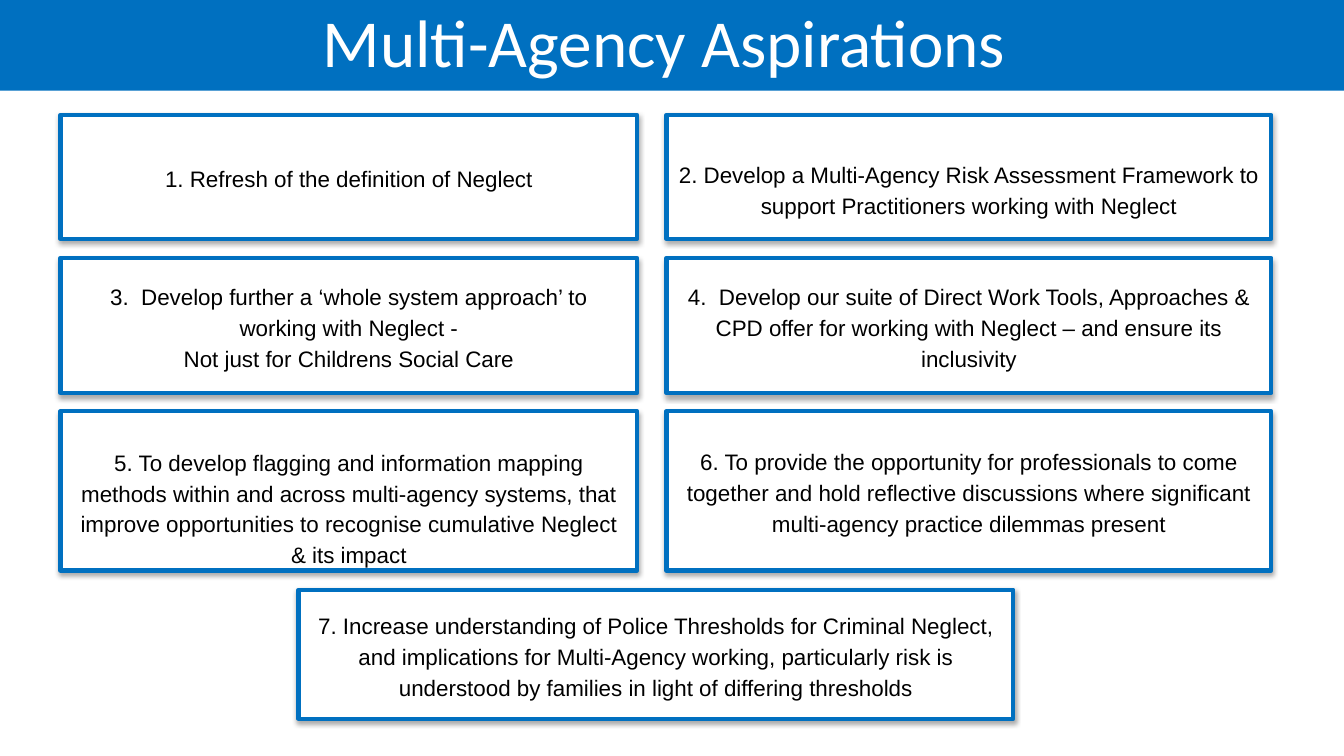
from lxml.etree import SubElement
from pptx import Presentation
from pptx.dml.color import RGBColor
from pptx.enum.shapes import MSO_SHAPE
from pptx.enum.text import MSO_ANCHOR, MSO_AUTO_SIZE, PP_ALIGN
from pptx.oxml.ns import qn
from pptx.util import Inches, Pt

BLUE = RGBColor(0x00, 0x70, 0xC0)
WHITE = RGBColor(0xFF, 0xFF, 0xFF)
BLACK = RGBColor(0x00, 0x00, 0x00)

SLIDE_WIDTH, SLIDE_HEIGHT = Inches(13.33), Inches(7.5)
BANNER_SHARE = 0.12
COLUMNS = {"left": (0.6, 5.72), "right": (6.61, 6.0), "centre": (2.96, 7.09)}
ROWS = [(1.14, 1.23), (2.56, 1.34), (4.08, 1.58), (5.85, 1.28)]

ASPIRATIONS = [
    ("left", 0, ["1. Refresh of the definition of Neglect"], 0.05, 0.05),
    ("right", 0, ["2. Develop a Multi-Agency Risk Assessment Framework to support "
                  "Practitioners working with Neglect"], 0.27, 0.05),
    ("left", 1, ["3.  Develop further a ‘whole system approach’ to working with Neglect -",
                 "Not just for Childrens Social Care"], 0.05, 0.05),
    ("right", 1, ["4.  Develop our suite of Direct Work Tools, Approaches & CPD offer for "
                  "working with Neglect – and ensure its inclusivity"], 0.05, 0.05),
    ("left", 2, ["5. To develop flagging and information mapping methods within and across "
                 "multi-agency systems, that improve opportunities to recognise cumulative "
                 "Neglect & its impact"], 0.31, 0),
    ("right", 2, ["6. To provide the opportunity for professionals to come together and hold "
                  "reflective discussions where significant multi-agency practice dilemmas "
                  "present"], 0.05, 0.05),
    ("centre", 3, ["7. Increase understanding of Police Thresholds for Criminal Neglect, and "
                   "implications for Multi-Agency working, particularly risk is understood by "
                   "families in light of differing thresholds"], 0.05, 0.05),
]


def format_paragraph(paragraph, font_name, size, color, line_spacing):
    """Centre a paragraph and set its font and line spacing."""
    paragraph.alignment = PP_ALIGN.CENTER
    paragraph.line_spacing = line_spacing
    paragraph.font.name = font_name
    paragraph.font.size = Pt(size)
    paragraph.font.color.rgb = color


def add_soft_shadow(shape):
    """Give a shape a soft shadow falling straight down."""
    shape.shadow.inherit = False
    effects = shape.element.spPr.find(qn("a:effectLst"))
    shadow = SubElement(effects, qn("a:outerShdw"), blurRad=str(Pt(3.5)),
                        dist=str(Pt(2.2)), dir="5400000", rotWithShape="0")
    color = SubElement(shadow, qn("a:srgbClr"), val=str(BLACK))
    SubElement(color, qn("a:alpha"), val="32000")


def format_banner(title):
    """Turn the title placeholder into a full-width blue banner."""
    title.left, title.top = 0, 0
    title.width, title.height = SLIDE_WIDTH, int(SLIDE_HEIGHT * BANNER_SHARE)
    title.fill.solid()
    title.fill.fore_color.rgb = BLUE
    frame = title.text_frame
    frame.text = "Multi-Agency Aspirations"
    frame.auto_size = MSO_AUTO_SIZE.NONE
    frame.vertical_anchor = MSO_ANCHOR.MIDDLE
    frame.margin_right = Inches(0.25)
    format_paragraph(frame.paragraphs[0], "Calibri", 48, WHITE, 0.9)


def add_aspiration(slide, column, row, lines, margin_top, margin_bottom):
    """Add one outlined aspiration box in its grid cell."""
    left, width = COLUMNS[column]
    top, height = ROWS[row]
    box = slide.shapes.add_shape(MSO_SHAPE.RECTANGLE, Inches(left), Inches(top),
                                 Inches(width), Inches(height))
    box.fill.solid()
    box.fill.fore_color.rgb = WHITE
    box.line.color.rgb = BLUE
    box.line.width = Pt(3)
    add_soft_shadow(box)
    frame = box.text_frame
    frame.word_wrap = True
    frame.vertical_anchor = MSO_ANCHOR.MIDDLE
    frame.margin_top, frame.margin_bottom = Inches(margin_top), Inches(margin_bottom)
    frame.text = "\n".join(lines)
    for paragraph in frame.paragraphs:
        format_paragraph(paragraph, "Arial", 16, BLACK, 1.15)


def main():
    """Build the slide and save it."""
    presentation = Presentation()
    presentation.slide_width, presentation.slide_height = SLIDE_WIDTH, SLIDE_HEIGHT
    slide = presentation.slides.add_slide(presentation.slide_layouts[5])
    format_banner(slide.shapes.title)
    for aspiration in ASPIRATIONS:
        add_aspiration(slide, *aspiration)
    presentation.save("out.pptx")


if __name__ == "__main__":
    main()
